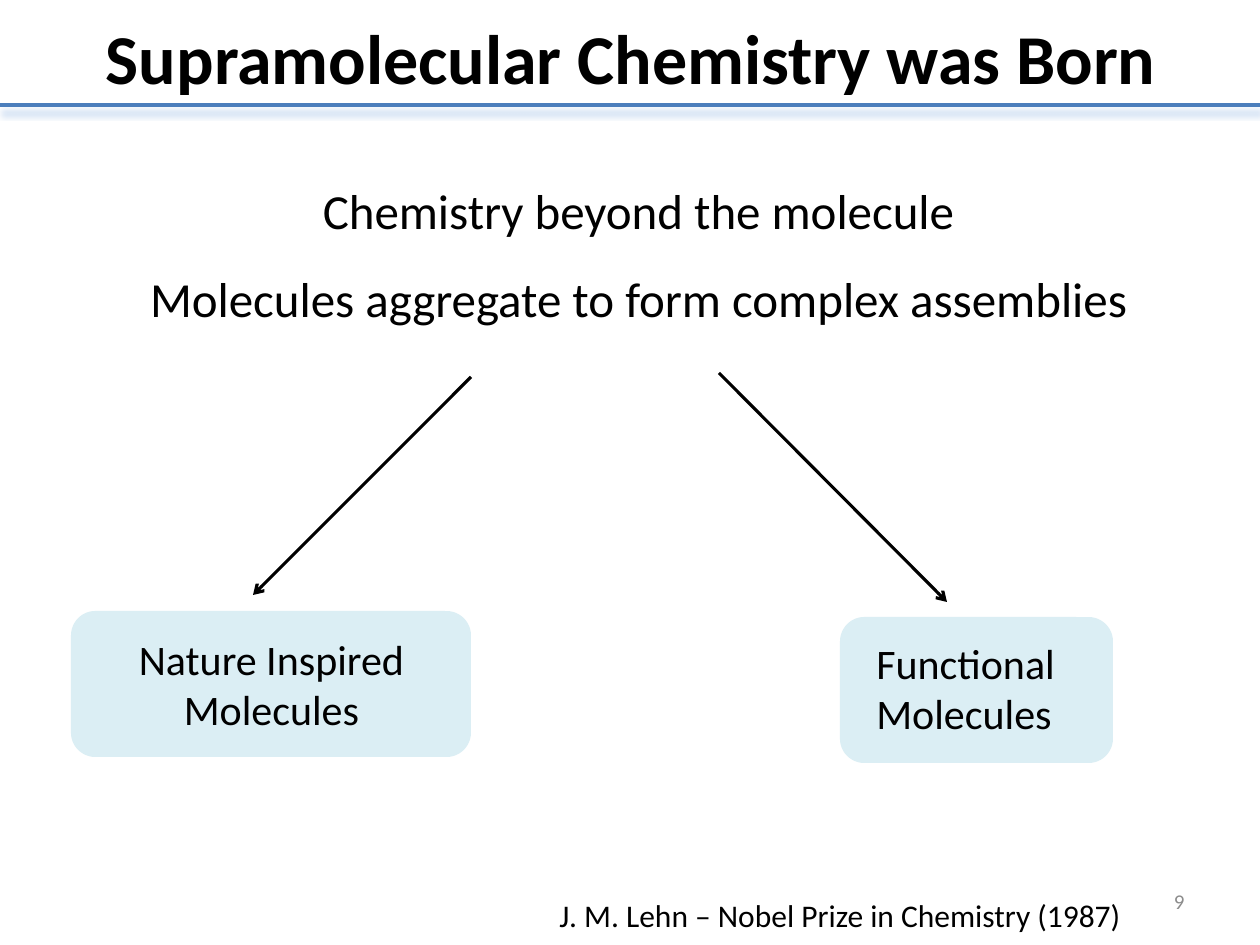
import pptx
import pptx.util
import pptx.dml.color
import pptx.enum.shapes
import pptx.enum.text
import pptx.oxml
import pptx.oxml.ns

PX = 914400 / 126
FONT = "Calibri"
BLACK, GREY, PALE_BLUE = "000000", "8C8C8C", "DBEEF4"
RULE_BLUE, RULE_SHADOW = "4B7EBC", "C6D9F1"
ALIGN = pptx.enum.text.PP_ALIGN
ANCHOR = pptx.enum.text.MSO_ANCHOR

# Boxes are (left, top, width, height) in px
TEXTS = [
    (["Supramolecular Chemistry was Born"], (1, 8, 1260, 97),
     dict(size=40, bold=True, align=ALIGN.CENTER)),
    (["Chemistry beyond the molecule",
      "Molecules aggregate to form complex assemblies"], (132, 145, 1013, 190),
     dict(size=28, align=ALIGN.CENTER, line_spacing=1.5, wrap=False)),
    (["Nature Inspired Molecules"], (71, 627, 401, 115),
     dict(size=24, align=ALIGN.CENTER)),
    (["Functional", "Molecules"], (864, 631, 224, 115), dict(size=24)),
    (["J. M. Lehn – Nobel Prize in Chemistry (1987)"], (547, 890, 593, 50),
     dict(size=18, wrap=False)),
    (["9"], (903, 876, 294, 50),
     dict(size=12, color=GREY, align=ALIGN.RIGHT, anchor=ANCHOR.MIDDLE)),
]
PANELS = [(71, 611, 400, 146), (840, 617, 273, 146)]
RULE = ((0, 105), (1260, 105))
ARROWS = [((471, 377), (253, 595)), ((719, 373), (947, 602))]


def emu(*lengths):
    return [pptx.util.Emu(round(length * PX)) for length in lengths]


def rgb(color):
    return pptx.dml.color.RGBColor.from_string(color)


def add_text(slide, lines, box, size, color=BLACK, bold=False, align=ALIGN.LEFT,
             anchor=ANCHOR.TOP, line_spacing=None, wrap=True):
    frame = slide.shapes.add_textbox(*emu(*box)).text_frame
    frame.word_wrap = wrap
    frame.vertical_anchor = anchor
    frame.text = "\n".join(lines)
    for paragraph in frame.paragraphs:
        paragraph.alignment = align
        paragraph.line_spacing = line_spacing
        font = paragraph.runs[0].font
        font.name, font.size, font.bold = FONT, pptx.util.Pt(size), bold
        font.color.rgb = rgb(color)


def add_panel(slide, box):
    panel = slide.shapes.add_shape(
        pptx.enum.shapes.MSO_SHAPE.ROUNDED_RECTANGLE, *emu(*box))
    panel.shadow.inherit = False
    panel.fill.solid()
    panel.fill.fore_color.rgb = rgb(PALE_BLUE)
    panel.line.fill.background()


def add_line(slide, start, end, color, width):
    """Draw a straight connector with an empty effect list; return it."""
    line = slide.shapes.add_connector(
        pptx.enum.shapes.MSO_CONNECTOR.STRAIGHT, *emu(*start, *end))
    line.line.color.rgb = rgb(color)
    line.line.width = pptx.util.Pt(width)
    add_element(line._element.spPr, "a:effectLst")
    return line


def add_element(parent, tag, **attributes):
    element = pptx.oxml.parse_xml(f"<{tag} {pptx.oxml.ns.nsdecls('a')}/>")
    for name, value in attributes.items():
        element.set(name, str(value))
    parent.append(element)
    return element


def add_rule(slide):
    rule = add_line(slide, *RULE, RULE_BLUE, 2)
    effects = rule._element.spPr.find(pptx.oxml.ns.qn("a:effectLst"))
    depth = pptx.util.Pt(4)
    shadow = add_element(effects, "a:outerShdw", blurRad=depth, dist=depth,
                         dir=90 * 60000, algn="ctr", rotWithShape=0)
    add_element(shadow, "a:srgbClr", val=RULE_SHADOW)


def add_arrow(slide, start, end):
    arrow = add_line(slide, start, end, BLACK, 1.75)
    add_element(arrow.line._get_or_add_ln(), "a:tailEnd", type="arrow")


def main():
    deck = pptx.Presentation()
    deck.slide_width, deck.slide_height = emu(1260, 945)
    slide = deck.slides.add_slide(deck.slide_layouts[6])
    add_rule(slide)
    for box in PANELS:
        add_panel(slide, box)
    for start, end in ARROWS:
        add_arrow(slide, start, end)
    for lines, box, style in TEXTS:
        add_text(slide, lines, box, **style)
    deck.save("out.pptx")


if __name__ == "__main__":
    main()
